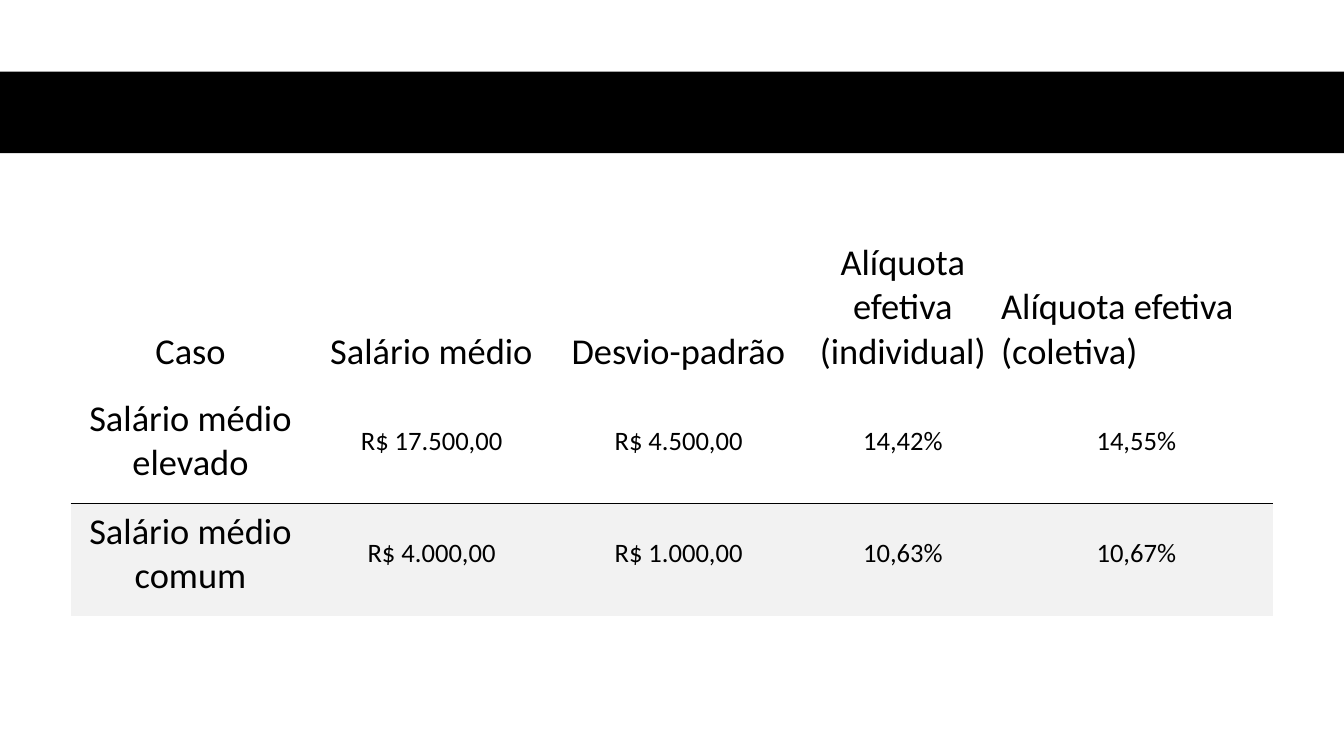
import pptx
import pptx.util
import pptx.dml.color
import pptx.enum.text
import pptx.enum.shapes
import pptx.oxml
import pptx.oxml.ns

Inches = pptx.util.Inches
Pt = pptx.util.Pt
RGB = pptx.dml.color.RGBColor.from_string
ALIGN = pptx.enum.text.PP_ALIGN
ANCHOR = pptx.enum.text.MSO_ANCHOR

ROWS = [
    ("Caso", "Salário médio", "Desvio-padrão", "Alíquota efetiva (individual)", "Alíquota efetiva (coletiva)"),
    ("Salário médio elevado", "R$ 17.500,00", "R$ 4.500,00", "14,42%", "14,55%"),
    ("Salário médio comum", "R$ 4.000,00", "R$ 1.000,00", "10,63%", "10,67%"),
]
WIDTHS = (2.4, 2.38, 2.52, 1.93, 2.7)
HEIGHTS = (1.53, 1.12, 1.12)
LEFT, TOP = 0.7, 2.34
THEME = {"font": "Calibri", "ink": "000000", "band": "F2F2F2", "label": 26, "value": 19, "rule": 0.75}
NO_GRID = "{2D5ABB26-0587-4C30-8999-92F81FD0307C}"
HEAD = {"vertical_anchor": ANCHOR.BOTTOM, "margin_top": Inches(0.03)}
BODY = {"vertical_anchor": ANCHOR.MIDDLE, "margin_top": Inches(0.05)}
SIDES = {"margin_left": 0, "margin_right": Inches(0.02), "margin_bottom": Inches(0.16)}


def apply(item, values):
    for name, value in values.items():
        setattr(item, name, value)


def add_rule(cell, side):
    line = pptx.oxml.parse_xml(
        f'<a:{side} {pptx.oxml.ns.nsdecls("a")} w="{Pt(THEME["rule"])}"><a:solidFill>'
        f'<a:srgbClr val="{THEME["ink"]}"/></a:solidFill></a:{side}>'
    )
    cell._tc.get_or_add_tcPr().insert(0, line)


def fill_cell(cell, text, row, col):
    cell.text = text
    apply(cell, {**SIDES, **(BODY if row else HEAD)})
    para = cell.text_frame.paragraphs[0]
    last = row == 0 and col == len(WIDTHS) - 1
    para.alignment = ALIGN.LEFT if last else ALIGN.CENTER
    size = THEME["value"] if row and col else THEME["label"]
    font = para.runs[0].font
    apply(font, {"name": THEME["font"], "size": Pt(size), "bold": False})
    font.color.rgb = RGB(THEME["ink"])
    if row == 2:
        cell.fill.solid()
        cell.fill.fore_color.rgb = RGB(THEME["band"])
    else:
        cell.fill.background()
    if row:
        add_rule(cell, "lnB" if row == 1 else "lnT")


def add_bar(slide, width):
    bar = slide.shapes.add_shape(
        pptx.enum.shapes.MSO_SHAPE.RECTANGLE, 0, Inches(0.71), width, Inches(0.81)
    )
    bar.shadow.inherit = False
    bar.fill.solid()
    bar.fill.fore_color.rgb = RGB(THEME["ink"])
    bar.line.fill.background()


def add_grid(slide):
    box = map(Inches, (LEFT, TOP, sum(WIDTHS), sum(HEIGHTS)))
    table = slide.shapes.add_table(len(ROWS), len(WIDTHS), *box).table
    apply(table, {"first_row": False, "horz_banding": False})
    table._tbl.tblPr.find(pptx.oxml.ns.qn("a:tableStyleId")).text = NO_GRID
    for col, width in zip(table.columns, WIDTHS):
        col.width = Inches(width)
    for row, height in zip(table.rows, HEIGHTS):
        row.height = Inches(height)
    for r, texts in enumerate(ROWS):
        for c, text in enumerate(texts):
            fill_cell(table.cell(r, c), text, r, c)


def main():
    deck = pptx.Presentation()
    apply(deck, {"slide_width": Inches(13.33), "slide_height": Inches(7.5)})
    slide = deck.slides.add_slide(deck.slide_layouts[6])
    add_bar(slide, deck.slide_width)
    add_grid(slide)
    deck.save("out.pptx")


if __name__ == "__main__":
    main()
